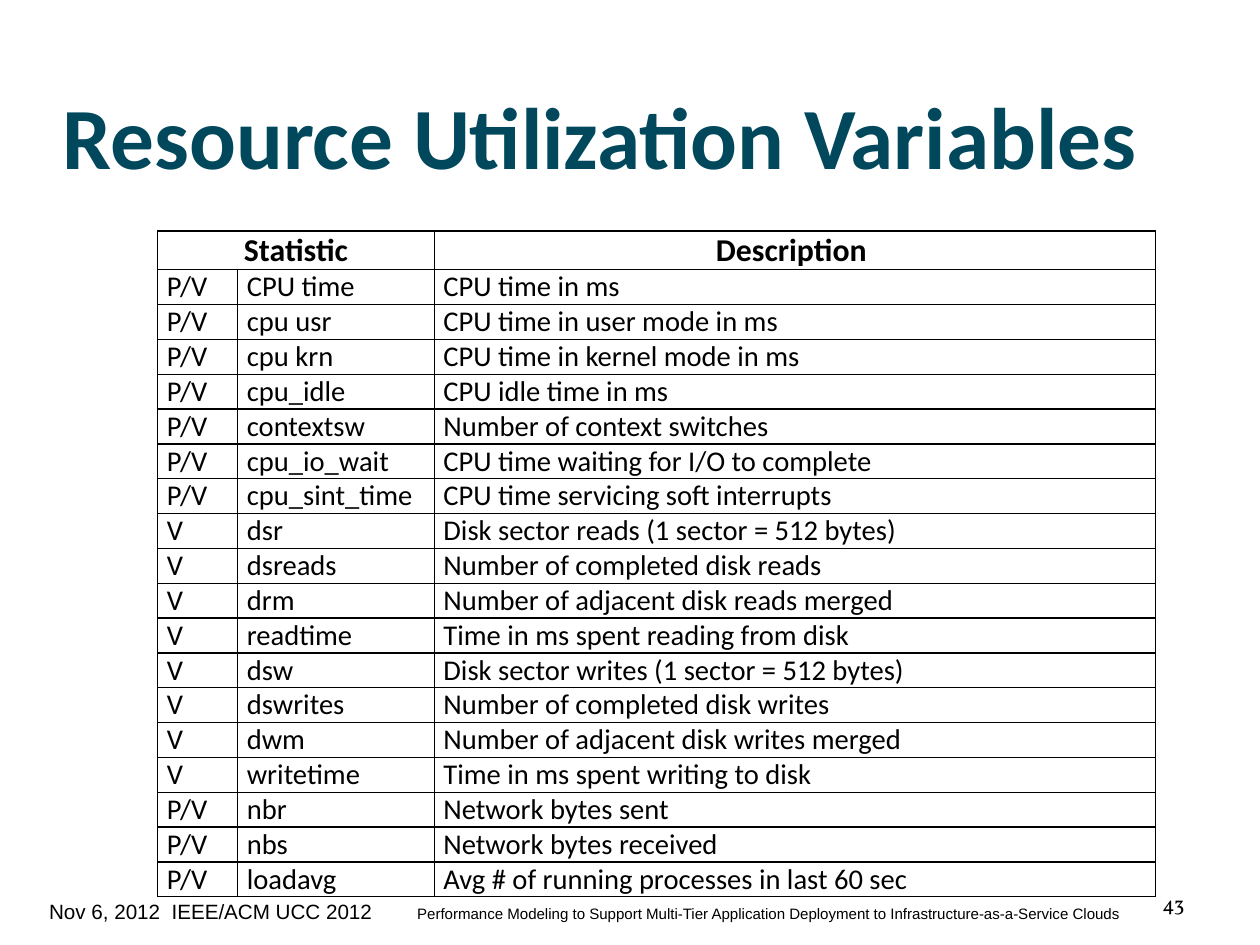
from dataclasses import dataclass

from lxml import etree
from pptx import Presentation
from pptx.dml.color import RGBColor
from pptx.enum.text import MSO_ANCHOR, MSO_AUTO_SIZE, PP_ALIGN
from pptx.oxml.ns import qn
from pptx.util import Cm, Inches, Pt

LEFT, CENTER = PP_ALIGN.LEFT, PP_ALIGN.CENTER
RIGHT, JUSTIFY = PP_ALIGN.RIGHT, PP_ALIGN.JUSTIFY
MIDDLE = MSO_ANCHOR.MIDDLE
NO_AUTOFIT = MSO_AUTO_SIZE.NONE
TITLE_ONLY = 5


@dataclass(frozen=True)
class Theme:
    ink: RGBColor = RGBColor(0, 0, 0)
    teal: RGBColor = RGBColor(0x02, 0x48, 0x5C)
    border: float = 1
    leading: float = 0.93
    heading: str = "Calibri"
    footer: str = "Arial"
    number: str = "Vollkorn"
    title_size: float = 55
    header_size: float = 20
    cell_size: float = 18
    footer_size: float = 13
    small_size: float = 9.5


THEME = Theme()
WIDTH, HEIGHT = Cm(28), Cm(21)
COLUMNS = [Inches(w) for w in (0.7, 1.72, 6.31)]
HEADER_HEIGHT, BODY_HEIGHT = Inches(0.34), Inches(5.49)
TABLE_LEFT, TABLE_TOP = Inches(1.38), Inches(2.02)
FOOTER_TAB = Inches(3.22)

STATISTICS = [
    ("P/V", "CPU time", "CPU time in ms"),
    ("P/V", "cpu usr", "CPU time in user mode in ms"),
    ("P/V", "cpu krn", "CPU time in kernel mode in ms"),
    ("P/V", "cpu_idle", "CPU idle time in ms"),
    ("P/V", "contextsw", "Number of context switches"),
    ("P/V", "cpu_io_wait", "CPU time waiting for I/O to complete"),
    ("P/V", "cpu_sint_time", "CPU time servicing soft interrupts"),
    ("V", "dsr", "Disk sector reads (1 sector = 512 bytes)"),
    ("V", "dsreads", "Number of completed disk reads"),
    ("V", "drm", "Number of adjacent disk reads merged"),
    ("V", "readtime", "Time in ms spent reading from disk"),
    ("V", "dsw", "Disk sector writes (1 sector = 512 bytes)"),
    ("V", "dswrites", "Number of completed disk writes"),
    ("V", "dwm", "Number of adjacent disk writes merged"),
    ("V", "writetime", "Time in ms spent writing to disk"),
    ("P/V", "nbr", "Network bytes sent"),
    ("P/V", "nbs", "Network bytes received"),
    ("P/V", "loadavg", "Avg # of running processes in last 60 sec"),
]


def set_attributes(obj, values):
    for name, value in values.items():
        setattr(obj, name, value)


def set_margins(obj, left, top, right, bottom):
    set_attributes(obj, {
        "margin_left": Inches(left), "margin_top": Inches(top),
        "margin_right": Inches(right), "margin_bottom": Inches(bottom)})


def add_run(p, text, font, size, color=THEME.ink, bold=False):
    r = p.add_run()
    r.text = text
    set_attributes(r.font, {"name": font, "size": Pt(size), "bold": bold})
    r.font.color.rgb = color


def place(sp, x, y, w, h):
    """Set the box of a shape as percentages of the slide's size."""
    set_attributes(sp, {
        "left": int(WIDTH * x / 100), "top": int(HEIGHT * y / 100),
        "width": int(WIDTH * w / 100), "height": int(HEIGHT * h / 100)})


def format_frame(tf, margins, align):
    """Centre the text vertically and return the first paragraph."""
    set_attributes(tf, {"word_wrap": True, "auto_size": NO_AUTOFIT,
                        "vertical_anchor": MIDDLE})
    set_margins(tf, *margins)
    p = tf.paragraphs[0]
    p.alignment = align
    return p


def add_title(s, text):
    sp = s.shapes.title
    place(sp, 5, 5.5, 90, 16.7)
    p = format_frame(sp.text_frame, (0, 0.06, 0, 0), LEFT)
    add_run(p, text, THEME.heading, THEME.title_size, THEME.teal, True)


def add_text_box(s, box, margins, align):
    sp = s.shapes.add_textbox(0, 0, 0, 0)
    place(sp, *box)
    return format_frame(sp.text_frame, margins, align)


def add_footer(s, event, talk):
    p = add_text_box(s, (3.9, 93.9, 88.5, 5.3), (0, 0, 0, 0), LEFT)
    p.line_spacing = THEME.leading
    tabs = etree.SubElement(p._p.get_or_add_pPr(), qn("a:tabLst"))
    etree.SubElement(tabs, qn("a:tab"), pos=str(FOOTER_TAB), algn="l")
    add_run(p, event + "\t", THEME.footer, THEME.footer_size)
    add_run(p, talk, THEME.footer, THEME.small_size)


def add_page_number(s, number):
    p = add_text_box(s, (66.7, 93, 28.3, 5.1),
                     (0.11, 0.06, 0.11, 0.06), RIGHT)
    add_run(p, number, THEME.number, THEME.footer_size)


def add_borders(cell):
    tc_pr = cell._tc.get_or_add_tcPr()
    for side in ("lnL", "lnR", "lnT", "lnB"):
        line = etree.SubElement(tc_pr, qn("a:" + side),
                                w=str(Pt(THEME.border)))
        fill = etree.SubElement(line, qn("a:solidFill"))
        etree.SubElement(fill, qn("a:srgbClr"), val=str(THEME.ink))


def fill_cell(cell, text, header):
    add_borders(cell)
    cell.fill.background()
    cell.vertical_anchor = MIDDLE
    set_margins(cell, 0.08, 0, 0.08, 0)
    p = cell.text_frame.paragraphs[0]
    set_attributes(p, {"alignment": CENTER if header else JUSTIFY,
                       "line_spacing": THEME.leading})
    if text:
        size = THEME.header_size if header else THEME.cell_size
        add_run(p, text, THEME.heading, size, bold=header)


def add_statistics_table(s, headings, records):
    rows = [headings, *records]
    table = s.shapes.add_table(
        len(rows), len(COLUMNS), TABLE_LEFT, TABLE_TOP,
        sum(COLUMNS), HEADER_HEIGHT + BODY_HEIGHT).table
    set_attributes(table, {"first_row": False, "horz_banding": False})
    for column, width in zip(table.columns, COLUMNS):
        column.width = width
    for i, row in enumerate(rows):
        header = i == 0
        table.rows[i].height = (HEADER_HEIGHT if header
                                else BODY_HEIGHT // len(records))
        for j, text in enumerate(row):
            fill_cell(table.cell(i, j), text, header)
    table.cell(0, 0).merge(table.cell(0, 1))


def main():
    prs = Presentation()
    prs.slide_width = WIDTH
    prs.slide_height = HEIGHT
    s = prs.slides.add_slide(prs.slide_layouts[TITLE_ONLY])
    add_footer(s, "Nov 6, 2012  IEEE/ACM UCC 2012",
               "Performance Modeling to Support Multi-Tier Application "
               "Deployment to Infrastructure-as-a-Service Clouds")
    add_title(s, "Resource Utilization Variables")
    add_statistics_table(s, ("Statistic", "", "Description "), STATISTICS)
    add_page_number(s, "43")
    prs.save("out.pptx")


if __name__ == "__main__":
    main()
